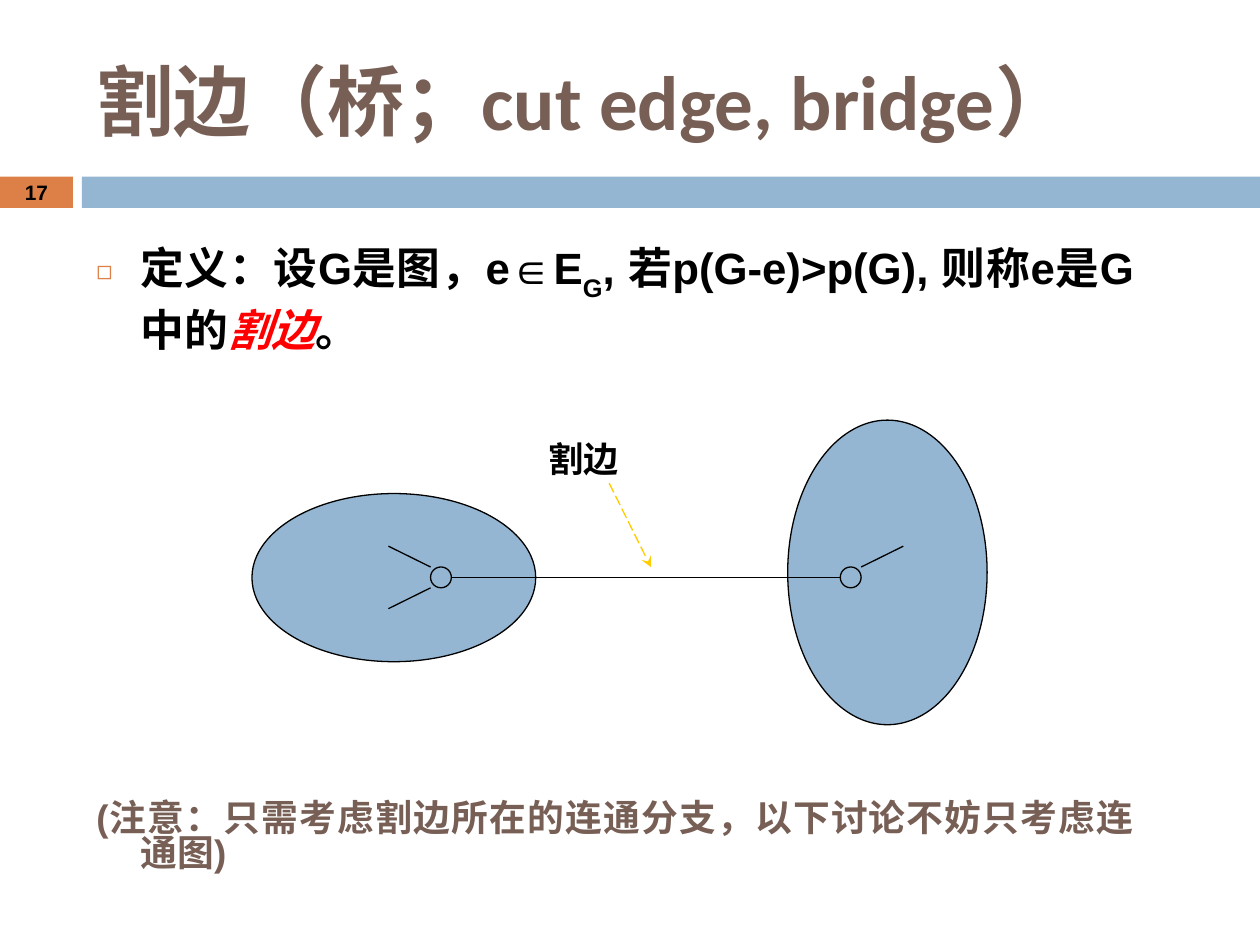
from lxml.etree import SubElement
from pptx import Presentation
from pptx.dml.color import RGBColor
from pptx.enum.dml import MSO_LINE
from pptx.enum.shapes import MSO_CONNECTOR, MSO_SHAPE
from pptx.enum.text import MSO_ANCHOR, MSO_AUTO_SIZE, PP_ALIGN
from pptx.oxml.ns import qn
from pptx.util import Cm, Pt

# Content
TITLE = "割边（桥；cut edge, bridge）"
NUMBER = "17"
EDGE_LABEL = "割边"
BODY = {"size": 25, "name": "Arial", "color": "000000", "bold": True}
DEFINITION = [
    ("定义：设G是图，e∈E", {}),
    ("G", {"baseline": -30000}),
    (", 若p(G-e)>p(G), 则称e是G中的", {}),
    ("割边", {"color": "FF0000", "italic": True}),
    ("。", {}),
]
NOTE = "(注意：只需考虑割边所在的连通分支，以下讨论不妨只考虑连通图)"

# Colours and measures in cm
BLUE, ORANGE, BROWN, BLACK, YELLOW = "94B6D2", "DD8047", "775F55", "000000", "FFCC00"
BARS = [(0, 3.56, 1.47, 0.63, ORANGE), (1.65, 3.56, 23.75, 0.63, BLUE)]
COMPONENTS = [(5.08, 9.95, 5.72, 3.39), (15.88, 8.47, 4.02, 6.14)]
NODE_Y, RADIUS = 11.64, 0.21
LEFT_NODE, RIGHT_NODE = 8.89, 17.15
SPOKES = [(LEFT_NODE, -1, -1), (LEFT_NODE, -1, 1), (RIGHT_NODE, 1, -1)]
SPOKE_RUN, SPOKE_RISE = 0.85, 0.42


def rgb(value):
    return RGBColor.from_string(value)


def add_span(para, text, formats):
    span = para.add_run()
    span.text = text
    for key, value in formats.items():
        if key == "color":
            span.font.color.rgb = rgb(value)
        elif key == "baseline":
            span._r.get_or_add_rPr().set("baseline", str(value))
        else:
            setattr(span.font, key, Pt(value) if key == "size" else value)


def place(box, left, top, width, height):
    box.left, box.top, box.width, box.height = map(Cm, (left, top, width, height))


def set_frame(box, anchor):
    settings = {"word_wrap": True, "auto_size": MSO_AUTO_SIZE.NONE, "vertical_anchor": anchor}
    for key, value in settings.items():
        setattr(box.text_frame, key, value)


def add_box(page, area, text, formats, anchor=MSO_ANCHOR.TOP):
    box = page.shapes.add_textbox(*map(Cm, area))
    set_frame(box, anchor)
    para = box.text_frame.paragraphs[0]
    add_span(para, text, formats)
    return para


def add_filled(page, kind, area, fill, outlined=True):
    shape = page.shapes.add_shape(kind, *map(Cm, area))
    shape.shadow.inherit = False
    shape.fill.solid()
    shape.fill.fore_color.rgb = rgb(fill)
    if outlined:
        shape.line.color.rgb = rgb(BLACK)
        shape.line.width = Pt(0.75)
    else:
        shape.line.fill.background()


def add_line(page, start, end, color=BLACK):
    line = page.shapes.add_connector(MSO_CONNECTOR.STRAIGHT, *map(Cm, start + end))
    line.line.color.rgb = rgb(color)
    line.line.width = Pt(0.75)
    SubElement(line._element.spPr, qn("a:effectLst"))
    return line


def format_para(para, before, bullet=None):
    para.alignment = PP_ALIGN.JUSTIFY
    para.space_before = Pt(before)
    props = para._p.get_or_add_pPr()
    props.set("marL", str(Cm(0.89)))
    props.set("indent", str(-Cm(0.89)))
    if bullet:
        color = SubElement(props, qn("a:buClr"))
        SubElement(color, qn("a:srgbClr"), val=ORANGE)
        SubElement(props, qn("a:buSzPct"), val="60000")
        SubElement(props, qn("a:buChar"), char=bullet)
    else:
        SubElement(props, qn("a:buNone"))


def add_texts(page):
    # Title
    title = page.shapes.title
    place(title, 1.69, 0.64, 22.65, 2.75)
    set_frame(title, MSO_ANCHOR.MIDDLE)
    heading = title.text_frame.paragraphs[0]
    heading.alignment = PP_ALIGN.LEFT
    add_span(heading, TITLE, {"size": 44, "name": "Calibri", "color": BROWN, "bold": True})

    # Definition above the drawing, note below it
    body = page.placeholders[1]
    place(body, 1.69, 4.72, 21.42, 13.62)
    set_frame(body, MSO_ANCHOR.TOP)
    definition = body.text_frame.paragraphs[0]
    format_para(definition, 7, "◻")
    for text, changes in DEFINITION:
        add_span(definition, text, BODY | changes)
    note = body.text_frame.add_paragraph()
    note.line_spacing = 0.8
    format_para(note, 256)
    add_span(note, NOTE, BODY | {"size": 21, "color": BROWN})


def add_graph(page):
    # Components, bridge and nodes
    for area in COMPONENTS:
        add_filled(page, MSO_SHAPE.OVAL, area, BLUE)
    add_line(page, (LEFT_NODE, NODE_Y), (RIGHT_NODE - RADIUS, NODE_Y))
    for x in (LEFT_NODE, RIGHT_NODE):
        area = (x - RADIUS, NODE_Y - RADIUS, 2 * RADIUS, 2 * RADIUS)
        add_filled(page, MSO_SHAPE.OVAL, area, BLUE)

    # Other edges leaving the nodes
    for x, across, down in SPOKES:
        start = (x + across * RADIUS, NODE_Y + down * RADIUS)
        end = (start[0] + across * SPOKE_RUN, start[1] + down * SPOKE_RISE)
        add_line(page, start, end)

    # Label with its arrow
    label = {"size": 20, "name": "Times New Roman", "color": BLACK, "bold": True}
    add_box(page, (10.8, 8.69, 3.81, 1.09), EDGE_LABEL, label)
    arrow = add_line(page, (12.28, 9.74), (13.12, 11.43), YELLOW)
    arrow.line.dash_style = MSO_LINE.LONG_DASH
    SubElement(arrow.line._get_or_add_ln(), qn("a:tailEnd"), type="stealth")


def main():
    deck = Presentation()
    deck.slide_width, deck.slide_height = Cm(25.4), Cm(19.05)
    page = deck.slides.add_slide(deck.slide_layouts[1])

    # Header band with page number
    for *area, fill in BARS:
        add_filled(page, MSO_SHAPE.RECTANGLE, area, fill, outlined=False)
    number = add_box(page, (0, 3.53, 1.47, 0.69), NUMBER, BODY | {"size": 11.9}, MSO_ANCHOR.MIDDLE)
    number.alignment = PP_ALIGN.CENTER

    add_texts(page)
    add_graph(page)
    deck.save("out.pptx")


if __name__ == "__main__":
    main()
